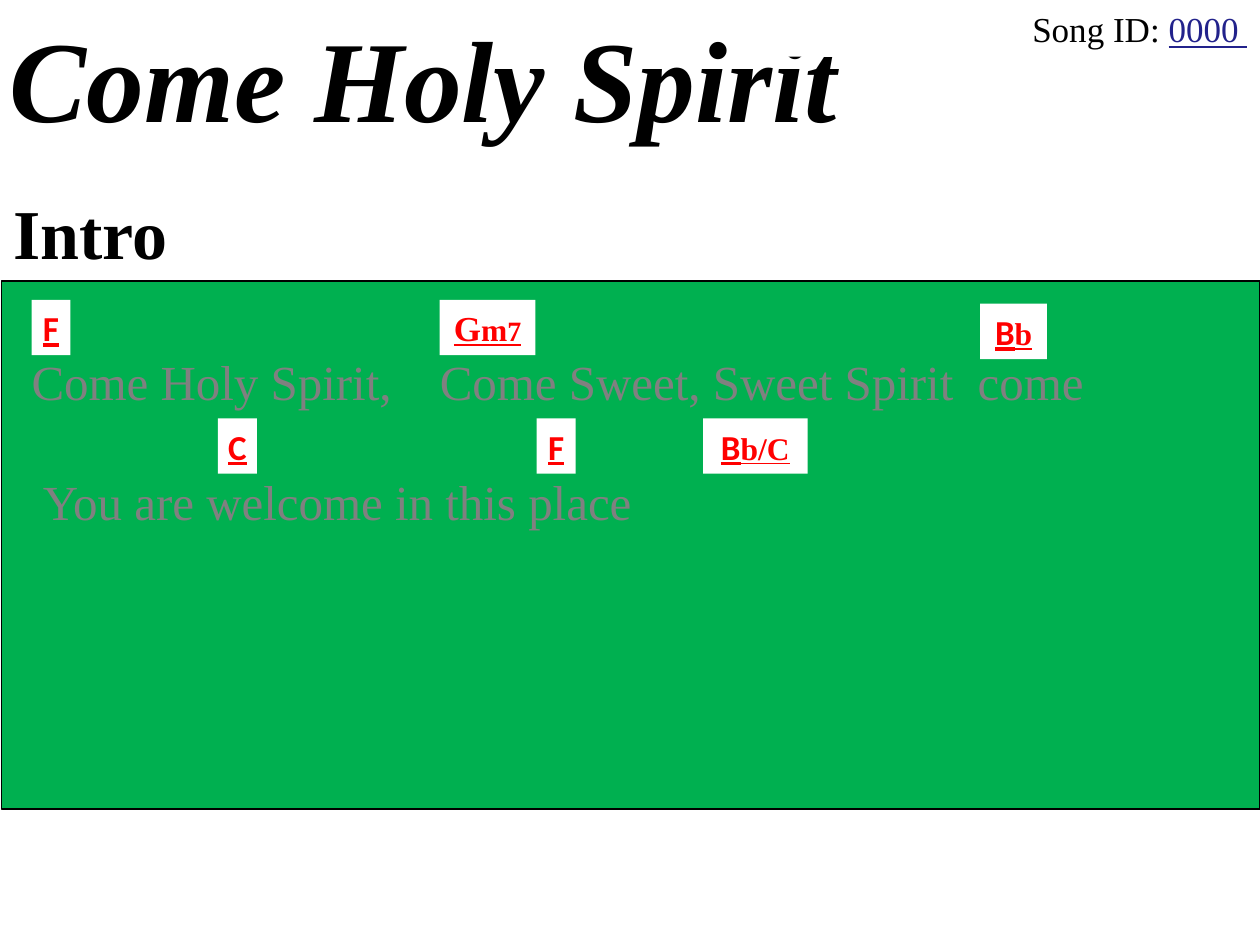
"""Build a song slide with a title, lyrics and chord labels."""
import pptx
import pptx.dml.color
import pptx.enum.shapes
import pptx.enum.text
import pptx.oxml
import pptx.oxml.ns
import pptx.util

Inches = pptx.util.Inches
Align = pptx.enum.text.PP_ALIGN
SERIF = "Times New Roman"
SANS = "Calibri"


def colour(value):
    return pptx.dml.color.RGBColor.from_string(value)


class SongPage:
    def __init__(self, page):
        self.page = page

    def panel(self, left, top, width, height, fill="FFFFFF", line=None):
        box = self.page.shapes.add_shape(
            pptx.enum.shapes.MSO_SHAPE.RECTANGLE,
            Inches(left), Inches(top), Inches(width), Inches(height))
        box.shadow.inherit = False
        box.fill.solid()
        box.fill.fore_color.rgb = colour(fill)
        if line:
            box.line.color.rgb = colour(line)
            box.line.width = pptx.util.Pt(0.75)
        else:
            box.line.fill.background()
        return box

    def fill_text(self, box, spans, align=Align.LEFT, wrap=True):
        frame = box.text_frame
        frame.word_wrap = wrap
        frame.vertical_anchor = pptx.enum.text.MSO_ANCHOR.MIDDLE
        para = frame.paragraphs[0]
        para.alignment = align
        for text, size, name, tint, styles in spans:
            span = para.add_run()
            span.text = text
            span.font.size = pptx.util.Pt(size)
            span.font.name = name
            span.font.color.rgb = colour(tint)
            span.font.bold = "b" in styles
            span.font.italic = "i" in styles
            span.font.underline = "u" in styles
        return para

    def heading(self, area, spans, align=Align.LEFT):
        self.fill_text(self.panel(*area), spans, align)

    def lyric(self, left, top, text, stops=()):
        box = self.page.shapes.add_textbox(
            Inches(left), Inches(top), Inches(10 - left), Inches(0.57))
        box.text_frame.margin_left = 0
        para = self.fill_text(box, [(text, 28, SERIF, "808080", "")])
        if stops:
            tabs = pptx.oxml.parse_xml(
                f"<a:tabLst {pptx.oxml.ns.nsdecls('a')}/>")
            for stop in stops:
                tab = pptx.oxml.parse_xml(
                    f"<a:tab {pptx.oxml.ns.nsdecls('a')} "
                    f'pos="{Inches(stop - left)}" algn="l"/>')
                tabs.append(tab)
            para._p.get_or_add_pPr().append(tabs)

    def chord(self, left, top, width, *parts):
        spans = [(text, size, name, "FF0000", "bu")
                 for text, size, name in parts]
        self.fill_text(self.panel(left, top, width, 0.44), spans,
                       Align.CENTER, wrap=False)


def main():
    deck = pptx.Presentation()
    deck.slide_width, deck.slide_height = Inches(10), Inches(7.5)
    song = SongPage(deck.slides.add_slide(deck.slide_layouts[6]))

    song.heading((-0.02, 0, 7.61, 1.21),
                 [("Come Holy Spirit", 66, SERIF, "000000", "bi")])
    song.heading((6.01, 0.01, 3.99, 0.44),
                 [("Song ID: ", 20, SERIF, "000000", ""),
                  ("0000 ", 20, SERIF, "22228B", "u")], Align.RIGHT)
    song.panel(0.01, 2.23, 9.99, 4.19, "00B050", "000000")
    song.heading((0.01, 1.45, 3.33, 0.77),
                 [("Intro", 40, SERIF, "000000", "b")])

    song.lyric(0.34, 3.69, "You are welcome in this place")
    song.lyric(0.25, 2.74,
               "Come Holy Spirit,\tCome Sweet, Sweet Spirit\tcome",
               (3.49, 7.76))

    first_row, second_row = 2.38, 3.32
    song.chord(0.25, first_row, 0.31, ("F", 20, SANS))
    song.chord(3.49, first_row, 0.76,
               ("G", 20, SERIF), ("m", 18, SERIF), ("7", 16, SERIF))
    song.chord(7.78, 2.41, 0.53, ("B", 20, SANS), ("b", 18, SERIF))
    song.chord(1.73, second_row, 0.31, ("C", 20, SANS))
    song.chord(4.26, second_row, 0.31, ("F", 20, SANS))
    song.chord(5.58, second_row, 0.83, ("B", 20, SANS), ("b/C", 18, SERIF))

    deck.save("out.pptx")


if __name__ == "__main__":
    main()
